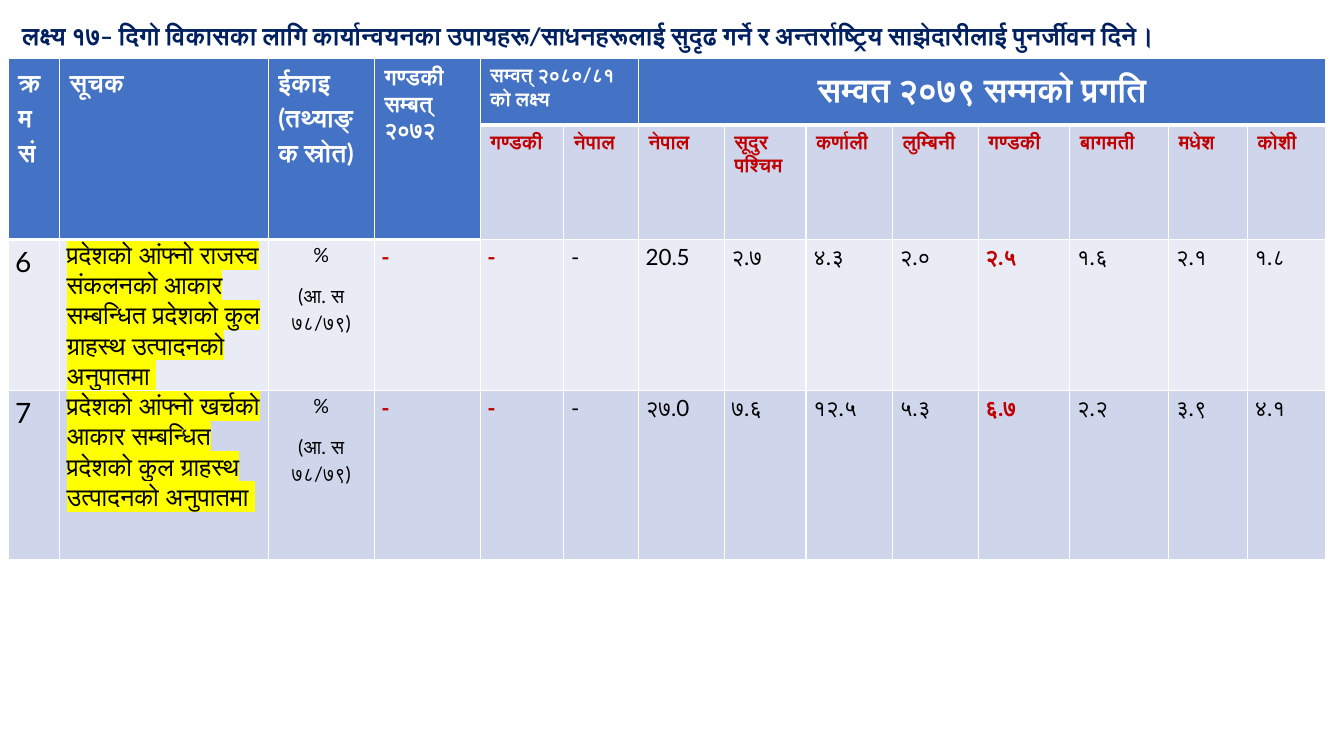
"""Build the goal 17 slide: a provincial progress table under a title."""
import pptx
import pptx.dml.color
import pptx.enum.text
import pptx.oxml
import pptx.oxml.ns
import pptx.util

Cm = pptx.util.Cm
Pt = pptx.util.Pt
qn = pptx.oxml.ns.qn
NAMESPACE = 'xmlns:a="http://schemas.openxmlformats.org/drawingml/2006/main"'
LEFT = pptx.enum.text.PP_ALIGN.LEFT
CENTER = pptx.enum.text.PP_ALIGN.CENTER
TOP = pptx.enum.text.MSO_ANCHOR.TOP
BLUE, PALE, LIGHT = "4472C4", "CFD5EA", "E9EBF5"
WHITE, BLACK, RED, NAVY, YELLOW = "FFFFFF", "000000", "C00000", "002060", "FFFF00"


def color(code):
    return pptx.dml.color.RGBColor.from_string(code)


def write(frame, text, size, ink, bold, font="Lato", align=LEFT, spacing=1.15, highlight=None):
    frame.text = text
    frame.word_wrap = True
    for para in frame.paragraphs:
        layout = {"alignment": align, "line_spacing": spacing,
                  "space_before": Pt(0), "space_after": Pt(10)}
        for name, value in layout.items():
            setattr(para, name, value)
        for span in para.runs:
            for name, value in {"size": Pt(size), "bold": bold, "name": font}.items():
                setattr(span.font, name, value)
            span.font.color.rgb = color(ink)
            properties = span.font._element
            properties.find(qn("a:latin")).addnext(
                pptx.oxml.parse_xml(f'<a:cs {NAMESPACE} typeface="{font}"/>'))
            if highlight:
                properties.find(qn("a:solidFill")).addnext(pptx.oxml.parse_xml(
                    f'<a:highlight {NAMESPACE}><a:srgbClr val="{highlight}"/></a:highlight>'))


deck = pptx.Presentation()
deck.slide_width, deck.slide_height = Cm(33.87), Cm(19.05)
page = deck.slides.add_slide(deck.slide_layouts[5])

title = page.shapes.title
for name, value in {"left": 0.3, "top": 0.28, "width": 33.02, "height": 1.12}.items():
    setattr(title, name, Cm(value))
write(title.text_frame,
      "लक्ष्य १७– दिगो विकासका लागि कार्यान्वयनका उपायहरू/साधनहरूलाई सुदृढ गर्ने र "
      "अन्तर्राष्ट्रिय साझेदारीलाई पुनर्जीवन दिने।", 18, NAVY, True, font="Calibri")
title.text_frame.vertical_anchor = TOP
title.text_frame.auto_size = pptx.enum.text.MSO_AUTO_SIZE.NONE

widths = [1.3, 5.26, 2.67, 2.67, 2.11, 1.88, 2.16, 2.06, 2.18, 2.16, 2.31, 2.49, 1.98, 1.98]
heights = [1.68, 2.74, 3.66, 4.27]
table = page.shapes.add_table(len(heights), len(widths), Cm(0.2), Cm(1.47),
                              Cm(sum(widths)), Cm(sum(heights))).table
for column, width in zip(table.columns, widths):
    column.width = Cm(width)
for row, height in zip(table.rows, heights):
    row.height = Cm(height)

headings = [
    (0, 1, 0, "क्रमसं", 18, LEFT, 1.15),
    (1, 1, 1, "सूचक", 18, LEFT, 1.15),
    (2, 1, 2, "ईकाइ (तथ्याङ्क स्रोत)", 18, LEFT, 1.15),
    (3, 1, 3, "गण्डकी सम्बत् २०७२", 16, LEFT, 1.0),
    (4, 0, 5, "सम्वत् २०८०/८१ को लक्ष्य", 14, LEFT, 1.0),
    (6, 0, 13, "सम्वत २०७९ सम्मको प्रगति", 24, CENTER, 1.15),
]
for first, last_row, last, text, size, align, spacing in headings:
    cell = table.cell(0, first)
    cell.merge(table.cell(last_row, last))
    write(cell.text_frame, text, size, WHITE, True, align=align, spacing=spacing)

provinces = ["गण्डकी", "नेपाल", "नेपाल", "सूदुर पश्चिम", "कर्णाली",
             "लुम्बिनी", "गण्डकी", "बागमती", "मधेश", "कोशी"]
for column, province in enumerate(provinces, 4):
    write(table.cell(1, column).text_frame, province, 14, RED, True, spacing=1.0)

unit = "%\n(आ. स ७८/७९)"
indicators = [
    ["6", "प्रदेशको आंफ्नो राजस्व संकलनको आकार सम्बन्धित प्रदेशको कुल ग्राहस्थ उत्पादनको अनुपातमा ",
     unit, "-", "-", "-", "20.5", "२.७", "४.३", "२.०", "२.५", "१.६", "२.१", "१.८"],
    ["7", "प्रदेशको आंफ्नो खर्चको आकार सम्बन्धित प्रदेशको कुल ग्राहस्थ उत्पादनको अनुपातमा ",
     unit, "-", "-", "-", "२७.0", "७.६", "१२.५", "५.३", "६.७", "२.२", "३.९", "४.१"],
]
special = {0: {"size": 20}, 1: {"size": 18, "spacing": 1.0, "highlight": YELLOW},
           2: {"size": 14, "align": CENTER}}
gandaki = {3, 4, 10}
for row, values in enumerate(indicators, 2):
    for column, value in enumerate(values):
        cell = table.cell(row, column)
        for name, margin in {"left": 0.18, "right": 0.18, "top": 0, "bottom": 0}.items():
            setattr(cell, f"margin_{name}", Cm(margin))
        marked = column in gandaki
        style = {"size": 16, "ink": RED if marked else BLACK, "bold": marked}
        write(cell.text_frame, value, **{**style, **special.get(column, {})})

for row in range(len(heights)):
    for column in range(len(widths)):
        cell = table.cell(row, column)
        header = row == 0 or (row == 1 and column < 4)
        cell.vertical_anchor = TOP
        cell.fill.solid()
        cell.fill.fore_color.rgb = color(BLUE if header else LIGHT if row == 2 else PALE)
        properties = cell._tc.get_or_add_tcPr()
        bottom = 3 if header and (row == 1 or column > 3) else 1
        top = 3 if row == 1 and column > 3 or row == 2 and column < 4 else 1
        edges = {"lnL": 1, "lnR": 1, "lnT": top, "lnB": bottom}
        for position, (edge, weight) in enumerate(edges.items()):
            properties.insert(position, pptx.oxml.parse_xml(
                f'<a:{edge} {NAMESPACE} w="{Pt(weight)}"><a:solidFill>'
                f'<a:srgbClr val="{WHITE}"/></a:solidFill></a:{edge}>'))

deck.save("out.pptx")
